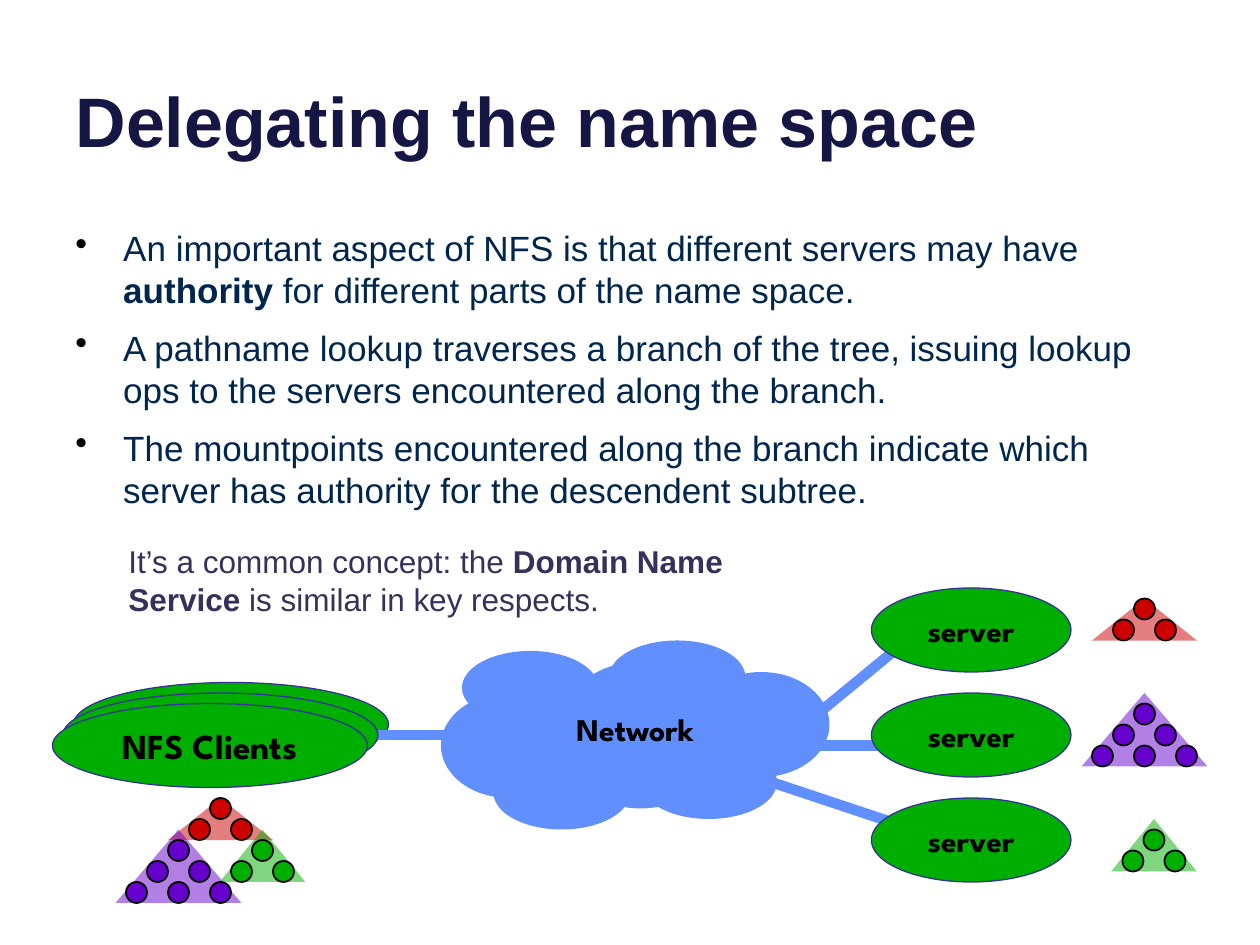
from lxml import etree
from pptx import Presentation
from pptx.dml.color import RGBColor
from pptx.enum.shapes import MSO_CONNECTOR, MSO_SHAPE
from pptx.enum.text import MSO_ANCHOR, PP_ALIGN
from pptx.oxml.ns import qn
from pptx.util import Inches, Pt

OVAL, TRIANGLE = MSO_SHAPE.OVAL, MSO_SHAPE.ISOSCELES_TRIANGLE
STRAIGHT = MSO_CONNECTOR.STRAIGHT
CENTER, LEFT = PP_ALIGN.CENTER, PP_ALIGN.LEFT
MIDDLE, BOTTOM = MSO_ANCHOR.MIDDLE, MSO_ANCHOR.BOTTOM
CELL = Inches(1) / 12  # the slide is a grid of 120 columns and 90 rows
BLUE, RED, PURPLE, GREEN, BLACK = "618FFD", "CC0000", "6600CC", "00AE00", "000000"
rgb = RGBColor.from_string


def add_figure(preset, left, top, width, height, fill, line=None, weight=0.75):
    """Add a flat filled shape, measured in grid cells."""
    figure = page.shapes.add_shape(
        preset, *(round(n * CELL) for n in (left, top, width, height)))
    figure.shadow.inherit = False
    figure.fill.solid()
    figure.fill.fore_color.rgb = rgb(fill)
    if line:
        figure.line.color.rgb = rgb(line)
        figure.line.width = Pt(weight)
    else:
        figure.line.fill.background()
    return figure


def write(para, spans, font, size, color, align=LEFT):
    """Fill a paragraph with spans; every second span is bold."""
    para.alignment = align
    para.font.name, para.font.size = font, Pt(size)
    para.font.color.rgb = rgb(color)
    for i, words in enumerate(spans):
        if words:
            span = para.add_run()
            span.text = words
            span.font.bold = i % 2 == 1


deck = Presentation()
deck.slide_width, deck.slide_height = Inches(10), Inches(7.5)
page = deck.slides.add_slide(deck.slide_layouts[5])

# Title
title = page.shapes.title
title.left, title.top = Inches(0.5), Inches(-0.37)
title.width, title.height = Inches(9), Inches(1.7)
title.text_frame.vertical_anchor = BOTTOM
write(title.text_frame.paragraphs[0], ["", "Delegating the name space"],
      "Arial", 40, "161645")

# Bullets
points = [
    ["An important aspect of NFS is that different servers may have ",
     "authority", " for different parts of the name space."],
    ["A pathname lookup traverses a branch of the tree, issuing lookup ops "
     "to the servers encountered along the branch."],
    ["The mountpoints encountered along the branch indicate which server "
     "has authority for the descendent subtree."],
]
body = page.shapes.add_textbox(Inches(0.5), Inches(1.75), Inches(9), Inches(2.5))
body.text_frame.word_wrap = True
for i, spans in enumerate(points):
    para = body.text_frame.add_paragraph() if i else body.text_frame.paragraphs[0]
    write(para, spans, "Arial", 20, "00264D")
    para.space_before = Pt(9)
    settings = para._p.get_or_add_pPr()
    settings.set("marL", str(Inches(0.38)))
    settings.set("indent", str(-Inches(0.38)))
    bullet_color = etree.Element(qn("a:buClr"))
    etree.SubElement(bullet_color, qn("a:srgbClr"), val=BLACK)
    bullet = etree.Element(qn("a:buChar"), char="•")
    spacing = settings.find(qn("a:spcBef"))
    spacing.addnext(bullet_color)
    bullet_color.addnext(bullet)

# Rearmost client, then the links that run behind everything else
add_figure(OVAL, 7, 65, 30, 8, GREEN, "333399")
links = [(60, 70, 90, 80), (34, 70, 60, 70), (73, 71, 92, 71), (73, 72, 90, 58)]
for ends in links:
    link = page.shapes.add_connector(STRAIGHT, *(round(n * CELL) for n in ends))
    link.line.color.rgb = rgb(BLUE)
    link.line.width = Pt(6)
    etree.SubElement(link._element.spPr, qn("a:effectLst"))

# Network cloud
puffs = [(58, 61, 13, 7), (53, 63, 16, 14), (44, 62, 13, 7), (42, 66, 13, 10),
         (66, 64, 13, 10), (61, 71, 13, 7), (47, 72, 13, 7)]
for puff in puffs:
    add_figure(OVAL, *puff, BLUE)
label = page.shapes.add_textbox(*(round(n * CELL) for n in (42, 67, 37, 6)))
label.text_frame.word_wrap = True
write(label.text_frame.paragraphs[0], ["", "Network"],
      "League Spartan", 18, BLACK, CENTER)

# Clients and servers
hosts = [(6, 66, 30, "", 20), (5, 67, 30, "NFS Clients", 20)]
hosts += [(83, top, 19, "server", 18) for top in (56, 66, 76)]
for left, top, width, name, size in hosts:
    host = add_figure(OVAL, left, top, width, 8, GREEN, "333399")
    if name:
        frame = host.text_frame
        frame.word_wrap = True
        frame.vertical_anchor = MIDDLE
        frame.margin_top = frame.margin_bottom = 0
        write(frame.paragraphs[0], ["", name], "League Spartan", size, BLACK, CENTER)

# Name trees: (colour, apex column, top row), on each server and joined at the clients
# Shape of each tree: width, height, gap above the root node, levels
forms = {RED: (10, 4, 0, [1, 2]), PURPLE: (12, 7, 1, [1, 2, 3]),
         GREEN: (8.16, 5, 1, [1, 2])}
trees = [(RED, 109, 57), (PURPLE, 109, 66), (GREEN, 109.9, 78),
         (RED, 21, 76), (PURPLE, 17, 79), (GREEN, 25, 79)]
for color, apex, top in trees:
    width, height = forms[color][:2]
    subtree = add_figure(TRIANGLE, apex - width / 2, top, width, height, color)
    tint = subtree._element.spPr.find(qn("a:solidFill"))[0]
    etree.SubElement(tint, qn("a:alpha"), val="50000")
for color, apex, top in trees:
    gap, levels = forms[color][2:]
    for level, count in enumerate(levels):
        for n in range(count):
            add_figure(OVAL, apex - 1 - 2 * level + 4 * n, top + gap + 2 * level,
                       2, 2, color, BLACK, 1)

# Remark
remark = page.shapes.add_textbox(Inches(0.92), Inches(4.25), Inches(5), Inches(0.71))
remark.text_frame.word_wrap = True
write(remark.text_frame.paragraphs[0],
      ["It’s a common concept: the ", "Domain Name Service ",
       "is similar in key respects."], "Arial", 18, "37305A")

deck.save("out.pptx")
